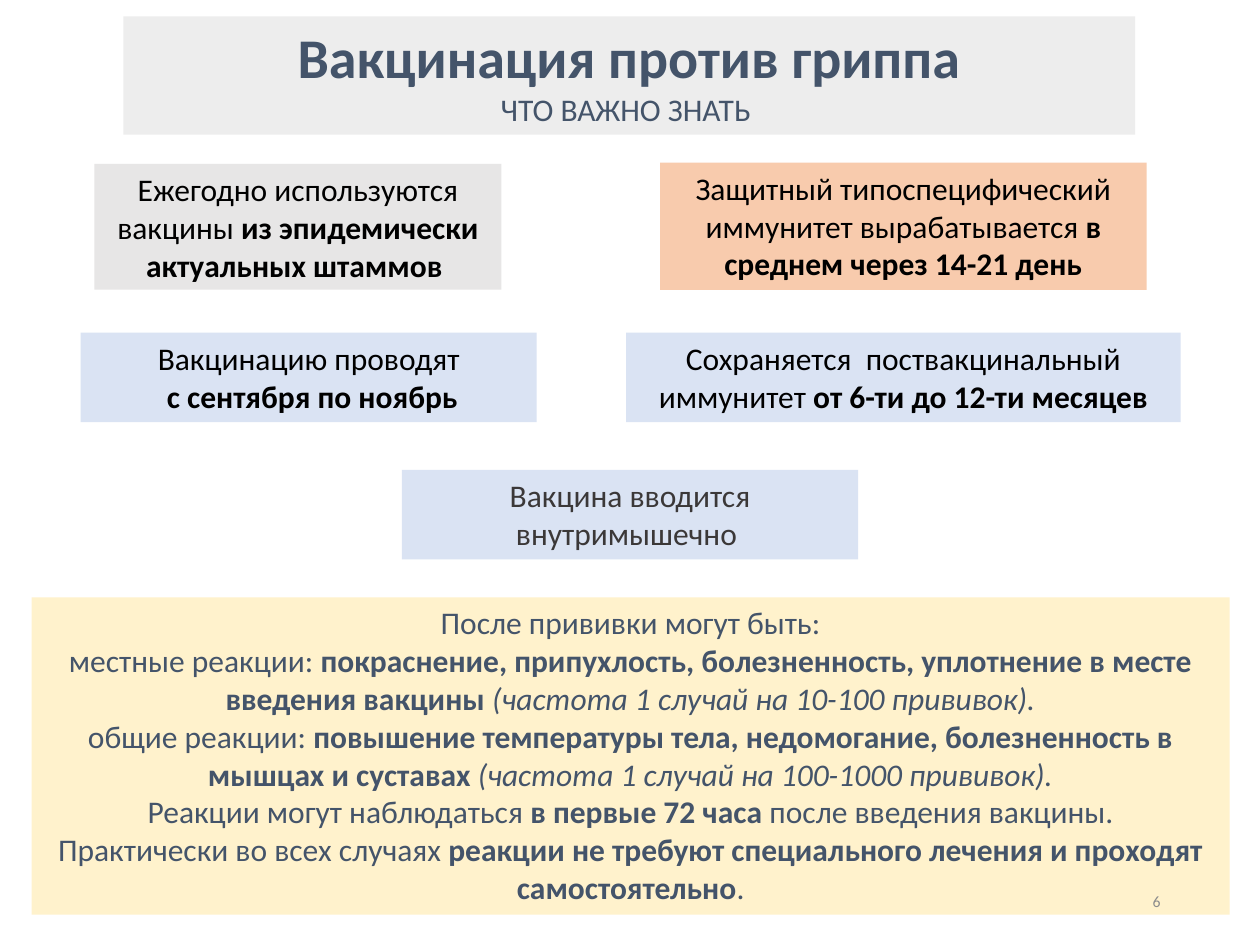
from dataclasses import dataclass

from pptx import Presentation
from pptx.dml.color import RGBColor
from pptx.enum.shapes import MSO_SHAPE
from pptx.enum.text import MSO_ANCHOR, PP_ALIGN
from pptx.slide import Slide
from pptx.util import Inches, Pt

RECTANGLE = MSO_SHAPE.RECTANGLE
TOP, MIDDLE = MSO_ANCHOR.TOP, MSO_ANCHOR.MIDDLE
CENTER, RIGHT = PP_ALIGN.CENTER, PP_ALIGN.RIGHT

FONT = "Calibri"
SLATE = RGBColor(0x44, 0x54, 0x6A)
BLACK = RGBColor(0x00, 0x00, 0x00)
CHARCOAL = RGBColor(0x3B, 0x38, 0x38)
NUMBER_GRAY = RGBColor(0x8C, 0x8C, 0x8C)
TITLE_GRAY = RGBColor(0xED, 0xED, 0xED)
LIGHT_GRAY = RGBColor(0xE7, 0xE6, 0xE6)
PEACH = RGBColor(0xF8, 0xCB, 0xAD)
PALE_BLUE = RGBColor(0xDA, 0xE3, 0xF3)
CREAM = RGBColor(0xFF, 0xF2, 0xCC)


@dataclass(frozen=True)
class Span:
    text: str
    bold: bool = False
    italic: bool = False
    size: float = 18


@dataclass(frozen=True)
class Panel:
    left: float
    top: float
    width: float
    height: float
    fill: RGBColor
    color: RGBColor
    paragraphs: list[list[Span]]


def bold(text: str, size: float = 18) -> Span:
    return Span(text, bold=True, size=size)


def italic(text: str) -> Span:
    return Span(text, italic=True)


PANELS = [
    # Title
    Panel(0.98, 0.13, 8.03, 0.94, TITLE_GRAY, SLATE, [
        [bold("Вакцинация против гриппа", 32)],
        [Span("ЧТО ВАЖНО ЗНАТЬ ")],
    ]),
    # Strains and immunity
    Panel(0.75, 1.3, 3.23, 1, LIGHT_GRAY, BLACK, [
        [Span("Ежегодно используются вакцины "),
         bold("из эпидемически актуальных штаммов ")],
    ]),
    Panel(5.24, 1.29, 3.86, 1.01, PEACH, BLACK, [
        [Span("Защитный типоспецифический иммунитет вырабатывается "),
         bold("в среднем через 14-21 день")],
    ]),
    # Timing, duration and method
    Panel(0.64, 2.64, 3.62, 0.71, PALE_BLUE, BLACK, [
        [Span("Вакцинацию проводят")],
        [Span(" "), bold("с сентября по ноябрь")],
    ]),
    Panel(4.97, 2.64, 4.4, 0.71, PALE_BLUE, BLACK, [
        [Span("Сохраняется  поствакцинальный иммунитет "),
         bold("от 6-ти до 12-ти месяцев")],
    ]),
    Panel(3.19, 3.73, 3.62, 0.71, PALE_BLUE, CHARCOAL, [
        [Span("Вакцина вводится внутримышечно ")],
    ]),
    # Possible reactions
    Panel(0.25, 4.74, 9.51, 2.52, CREAM, SLATE, [
        [Span("После прививки могут быть:")],
        [Span("местные реакции: "),
         bold("покраснение, припухлость, болезненность, уплотнение в месте "
              "введения вакцины "),
         italic("(частота 1 случай на 10-100 прививок).")],
        [Span("общие реакции: "),
         bold("повышение температуры тела, недомогание, болезненность в "
              "мышцах и суставах "),
         italic("(частота 1 случай на 100-1000 прививок).")],
        [Span("Реакции могут наблюдаться "), bold("в первые 72 часа "),
         Span("после введения вакцины.")],
        [Span("Практически во всех случаях "),
         bold("реакции не требуют специального лечения и проходят "
              "самостоятельно"),
         Span(".")],
    ]),
]


def add_panel(slide: Slide, panel: Panel) -> None:
    shape = slide.shapes.add_shape(
        RECTANGLE, Inches(panel.left), Inches(panel.top),
        Inches(panel.width), Inches(panel.height))
    shape.shadow.inherit = False
    shape.fill.solid()
    shape.fill.fore_color.rgb = panel.fill
    shape.line.fill.background()
    text_frame = shape.text_frame
    text_frame.word_wrap = True
    text_frame.vertical_anchor = TOP
    for index, spans in enumerate(panel.paragraphs):
        paragraph = text_frame.add_paragraph() if index else text_frame.paragraphs[0]
        paragraph.alignment = CENTER
        for span in spans:
            run = paragraph.add_run()
            run.text = span.text
            run.font.name = FONT
            run.font.size = Pt(span.size)
            run.font.bold = span.bold
            run.font.italic = span.italic
            run.font.color.rgb = panel.color


def add_slide_number(slide: Slide, number: str) -> None:
    text_box = slide.shapes.add_textbox(
        Inches(7.06), Inches(6.95), Inches(2.25), Inches(0.4))
    text_frame = text_box.text_frame
    text_frame.word_wrap = True
    text_frame.vertical_anchor = MIDDLE
    text_frame.text = number
    paragraph = text_frame.paragraphs[0]
    paragraph.alignment = RIGHT
    font = paragraph.runs[0].font
    font.name = FONT
    font.size = Pt(9)
    font.color.rgb = NUMBER_GRAY


def main() -> None:
    presentation = Presentation()
    presentation.slide_width = Inches(10)
    presentation.slide_height = Inches(7.5)
    slide = presentation.slides.add_slide(presentation.slide_layouts[6])
    for panel in PANELS:
        add_panel(slide, panel)
    add_slide_number(slide, "6")
    presentation.save("out.pptx")


if __name__ == "__main__":
    main()
